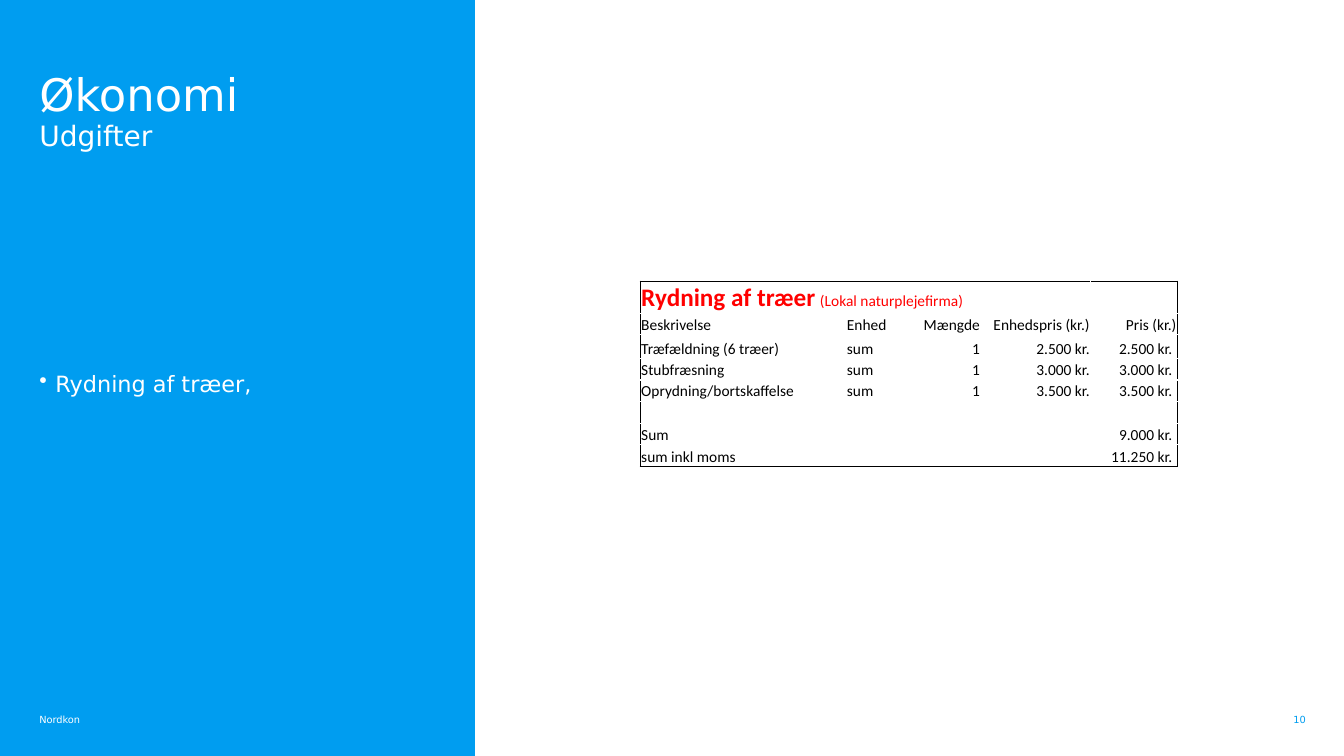
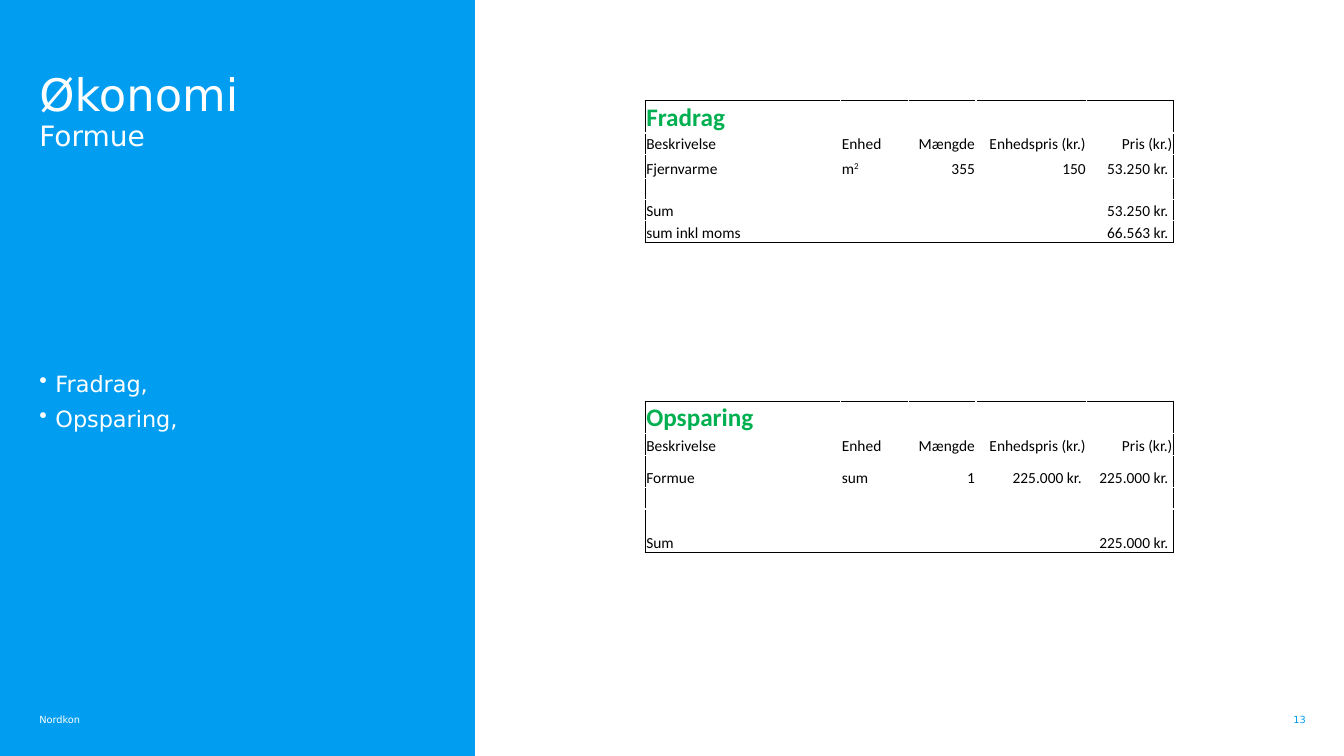
"""Build two budget slides with a coloured side panel and price tables."""
from lxml.etree import SubElement
from pptx import Presentation
from pptx.dml.color import RGBColor
from pptx.enum.shapes import MSO_SHAPE
from pptx.enum.text import MSO_ANCHOR, PP_ALIGN
from pptx.oxml.ns import qn
from pptx.util import Inches, Pt

COLORS = {"panel": "009DF0", "white": "FFFFFF", "black": "000000",
          "expense": "FF0000", "asset": "00B050"}
PANEL_FONT, TABLE_FONT = "DejaVu Sans", "Calibri"
FOOTER = "Nordkon"
TITLE = "Økonomi"
HEADER = ("Beskrivelse", "Enhed", "Mængde", "Enhedspris (kr.)", "Pris (kr.)")
BLANK_ROW = ("",) * 5
SUPERSCRIPT = "30000"
FIRST_RIGHT_COLUMN = 2
ASSET_WIDTHS = (1.94, 0.67, 0.67, 1.1, 0.86)

SLIDES = [
    {"subtitle": "Udgifter", "number": "10", "bullets": ["Rydning af træer,"],
     "tables": [
         {"title": "Rydning af træer", "note": "(Lokal naturplejefirma)", "color": "expense",
          "at": (6.35, 2.79), "widths": (2.04, 0.67, 0.67, 1.09, 0.86),
          "heights": (0.32, 0.21, 0.24, 0.21, 0.21, 0.22, 0.21, 0.22), "padded": (4,),
          "rows": [
              ("Træfældning (6 træer)", "sum", "1", "2.500 kr.", "2.500 kr."),
              ("Stubfræsning", "sum", "1", "3.000 kr.", "3.000 kr."),
              ("Oprydning/bortskaffelse", "sum", "1", "3.500 kr.", "3.500 kr."),
              BLANK_ROW,
              ("Sum", "", "", "", "9.000 kr."),
              ("sum inkl moms", "", "", "", "11.250 kr.")]}]},
    {"subtitle": "Formue", "number": "13", "bullets": ["Fradrag,", "Opsparing,"],
     "tables": [
         {"title": "Fradrag", "note": "", "color": "asset",
          "at": (6.4, 1), "widths": ASSET_WIDTHS,
          "heights": (0.32, 0.21, 0.24, 0.21, 0.21, 0.22), "padded": (4,),
          "rows": [
              ("Fjernvarme", ("m", "2"), "355", "150", "53.250 kr."),
              BLANK_ROW,
              ("Sum", "", "", "", "53.250 kr."),
              ("sum inkl moms", "", "", "", "66.563 kr.")]},
         {"title": "Opsparing", "note": "", "color": "asset",
          "at": (6.4, 3.98), "widths": ASSET_WIDTHS,
          "heights": (0.32, 0.22, 0.32, 0.21, 0.43), "padded": (3, 4),
          "rows": [
              ("Formue", "sum", "1", "225.000 kr.", "225.000 kr."),
              BLANK_ROW,
              ("Sum", "", "", "", "225.000 kr.")]}]},
]


def set_attributes(target, values):
    for name, value in values.items():
        setattr(target, name, value)


def add_run(paragraph, text, size, color, font=PANEL_FONT, bold=False):
    run = paragraph.add_run()
    run.text = text
    set_attributes(run.font, {"name": font, "size": Pt(size), "bold": bold})
    run.font.color.rgb = RGBColor.from_string(COLORS[color])
    return run


def add_text_frame(slide, left, top, width, height, anchor=MSO_ANCHOR.TOP):
    box = slide.shapes.add_textbox(Inches(left), Inches(top), Inches(width), Inches(height))
    set_attributes(box.text_frame, {
        "word_wrap": True, "vertical_anchor": anchor, "margin_left": 0,
        "margin_right": 0, "margin_top": 0, "margin_bottom": 0})
    return box.text_frame


def add_bullets(frame, bullets):
    for index, text in enumerate(bullets):
        paragraph = frame.add_paragraph() if index else frame.paragraphs[0]
        properties = paragraph._p.get_or_add_pPr()
        properties.set("marL", str(Inches(0.16)))
        properties.set("indent", str(Inches(-0.16)))
        SubElement(properties, qn("a:buChar"), char="•")
        paragraph.space_after = Pt(6)
        add_run(paragraph, text, 16, "white")


def add_panel(slide, content, height):
    panel = slide.shapes.add_shape(MSO_SHAPE.RECTANGLE, 0, 0, Inches(4.71), height)
    panel.shadow.inherit = False
    panel.fill.solid()
    panel.fill.fore_color.rgb = RGBColor.from_string(COLORS["panel"])
    panel.line.fill.background()

    footer = add_text_frame(slide, 0.39, 6.96, 0.85, 0.24, MSO_ANCHOR.BOTTOM)
    add_run(footer.paragraphs[0], FOOTER, 7, "white")

    heading = add_text_frame(slide, 0.39, 0.72, 3.92, 1.29).paragraphs[0]
    heading.line_spacing = 0.91
    add_run(heading, TITLE, 32, "white")
    heading.add_line_break()
    add_run(heading, content["subtitle"], 20, "white")

    add_bullets(add_text_frame(slide, 0.39, 3.67, 3.92, 3.03), content["bullets"])

    number = add_text_frame(slide, 12.26, 7.08, 0.69, 0.12, MSO_ANCHOR.BOTTOM).paragraphs[0]
    number.alignment = PP_ALIGN.RIGHT
    add_run(number, content["number"], 7, "panel")


def add_borders(cell, sides):
    properties = cell._tc.get_or_add_tcPr()
    for side, visible in sides.items():
        if visible:
            line = SubElement(properties, qn(f"a:ln{side}"), w=str(Pt(1)))
            fill = SubElement(line, qn("a:solidFill"))
            SubElement(fill, qn("a:srgbClr"), val=COLORS["black"])


def fill_cell(cell, value):
    paragraph = cell.text_frame.paragraphs[0]
    if not value:
        SubElement(paragraph._p, qn("a:endParaRPr"), sz="1100")
        return
    base, *raised = value if isinstance(value, tuple) else (value,)
    add_run(paragraph, base, 11, "black", TABLE_FONT)
    for text in raised:
        run = add_run(paragraph, text, 11, "black", TABLE_FONT)
        run._r.get_or_add_rPr().set("baseline", SUPERSCRIPT)


def add_price_table(slide, content):
    widths, heights = content["widths"], content["heights"]
    left, top = content["at"]
    table = slide.shapes.add_table(
        len(heights), len(widths), Inches(left), Inches(top),
        Inches(sum(widths)), Inches(sum(heights))).table
    set_attributes(table, {"first_row": False, "horz_banding": False})
    for column, width in zip(table.columns, widths):
        column.width = Inches(width)
    for row, height in zip(table.rows, heights):
        row.height = Inches(height)

    last_row, last_column = len(heights) - 1, len(widths) - 1
    for row_index, values in enumerate([BLANK_ROW, HEADER, *content["rows"]]):
        for column_index, value in enumerate(values):
            cell = table.cell(row_index, column_index)
            padded = row_index > 1 and column_index in content["padded"]
            set_attributes(cell, {
                "vertical_anchor": MSO_ANCHOR.BOTTOM, "margin_left": Inches(0.01),
                "margin_right": Inches(0.05 if padded else 0.01),
                "margin_top": Inches(0.01), "margin_bottom": 0})
            add_borders(cell, {"L": column_index == 0, "R": column_index == last_column,
                               "T": row_index == 0, "B": row_index == last_row})
            cell.fill.background()
            if column_index >= FIRST_RIGHT_COLUMN:
                cell.text_frame.paragraphs[0].alignment = PP_ALIGN.RIGHT
            if (row_index, column_index) != (0, 0):
                fill_cell(cell, value)

    title_cell = table.cell(0, 0)
    title = title_cell.text_frame.paragraphs[0]
    add_run(title, content["title"], 18, content["color"], TABLE_FONT, True)
    if content["note"]:
        add_run(title, " ", 14, content["color"], TABLE_FONT, True)
        add_run(title, content["note"], 11, content["color"], TABLE_FONT)
        title_cell.merge(table.cell(0, last_column - 1))


def main():
    presentation = Presentation()
    set_attributes(presentation, {"slide_width": Inches(13.33), "slide_height": Inches(7.5)})
    for content in SLIDES:
        slide = presentation.slides.add_slide(presentation.slide_layouts[6])
        add_panel(slide, content, presentation.slide_height)
        for table in content["tables"]:
            add_price_table(slide, table)
    presentation.save("out.pptx")


if __name__ == "__main__":
    main()
